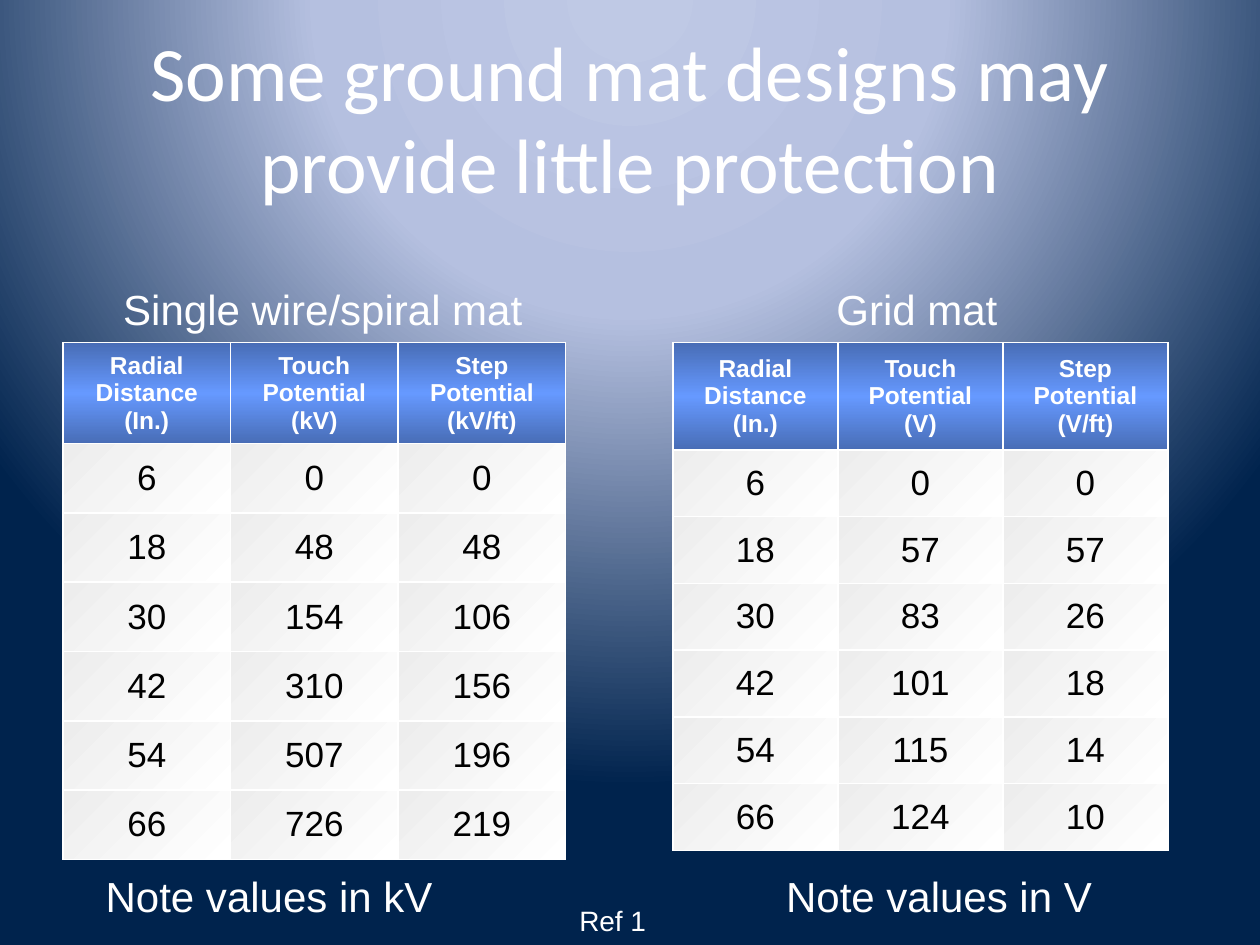
from pptx import Presentation, util as u
from pptx.dml.color import RGBColor
from pptx.enum import text
from pptx.oxml import parse_xml
from pptx.oxml.ns import nsdecls

# Content
TITLE = "Some ground mat designs may provide little protection"
TABLES = [  # left, top, column width, header height, row height, rows
    (0.5, 2.72, 1.33, 0.75, 0.55, [
        ("Radial Distance (In.)", "Touch Potential (kV)", "Step Potential (kV/ft)"),
        (6, 0, 0), (18, 48, 48), (30, 154, 106),
        (42, 310, 156), (54, 507, 196), (66, 726, 219)]),
    (5.34, 2.72, 1.31, 0.85, 0.53, [
        ("Radial Distance (In.)", "Touch Potential (V)", "Step Potential (V/ft)"),
        (6, 0, 0), (18, 57, 57), (30, 83, 26),
        (42, 101, 18), (54, 115, 14), (66, 124, 10)]),
]
LABELS = [  # text, left, top, width, height, size key
    ("Single wire/spiral mat", 0.88, 2.2, 3.4, 0.5, "label"),
    ("Grid mat", 6.54, 2.2, 1.49, 0.5, "label"),
    ("Note values in kV", 0.74, 6.86, 2.82, 0.5, "label"),
    ("Note values in V", 6.14, 6.86, 2.65, 0.5, "label"),
    ("Ref 1", 4.5, 7.12, 0.74, 0.37, "ref"),
]

# Gradient stops are (position %, colour, shade %)
THEME = {
    "light": "FFFFFF", "dark": "000000", "border": "FFFFFF",
    "head_font": "Calibri", "body_font": "Arial",
    "title": 44, "label": 24, "ref": 16, "head": 14, "cell": 20,
    "back": [(0, "BFC9E5", 100), (40, "B5C0E0", 100), (100, "00234D", 100)],
    "head_fill": [(0, "6699FF", 46.28), (50, "6699FF", 100), (100, "6699FF", 46.28)],
    "cell_fill": [(0, "FFFFFF", 84.71), (100, "FFFFFF", 100)],
}


def gradient(stops, direction):
    gs = "".join(
        f'<a:gs pos="{pos * 1000}"><a:srgbClr val="{color}">'
        + (f'<a:shade val="{round(shade * 1000)}"/>' if shade < 100 else "")
        + "</a:srgbClr></a:gs>" for pos, color, shade in stops)
    return f'<a:gradFill {nsdecls("a")} rotWithShape="1"><a:gsLst>{gs}</a:gsLst>{direction}</a:gradFill>'


def linear(stops, angle):
    return parse_xml(gradient(stops, f'<a:lin ang="{angle * 60000}" scaled="1"/>'))


def add_run(p, words, size, color, font=THEME["body_font"], bold=False):
    r = p.add_run()
    r.text = words
    r.font.name, r.font.size, r.font.bold = font, u.Pt(size), bold
    r.font.color.rgb = RGBColor.from_string(color)


def add_borders(tcPr, sides):
    for side in sides:
        tcPr.append(parse_xml(
            f'<a:ln{side} {nsdecls("a")} w="12700"><a:solidFill>'
            f'<a:srgbClr val="{THEME["border"]}"/></a:solidFill></a:ln{side}>'))


def add_data_table(s, left, top, col_w, head_h, row_h, rows):
    n_rows, n_cols = len(rows), len(rows[0])
    box = [u.Inches(v) for v in (left, top, col_w * n_cols, head_h + row_h * (n_rows - 1))]
    table = s.shapes.add_table(n_rows, n_cols, *box).table
    table.first_row = table.horz_banding = False
    for col in table.columns:
        col.width = u.Inches(col_w)
    for i, values in enumerate(rows):
        head = i == 0
        table.rows[i].height = u.Inches(head_h if head else row_h)
        for j, value in enumerate(values):
            cell = table.cell(i, j)
            cell.vertical_anchor = text.MSO_ANCHOR.MIDDLE
            p = cell.text_frame.paragraphs[0]
            p.alignment = text.PP_ALIGN.CENTER
            add_run(p, str(value), THEME["head" if head else "cell"],
                    THEME["light" if head else "dark"], bold=head)
            tcPr = cell._tc.get_or_add_tcPr()
            # The header's outer left edge stays open
            add_borders(tcPr, "RTB" if head and j == 0 else "LRTB")
            tcPr.append(linear(THEME["head_fill"], 90) if head
                        else linear(THEME["cell_fill"], 45))


def add_text(s, words, left, top, width, height, size, **style):
    sp = s.shapes.add_textbox(*[u.Inches(v) for v in (left, top, width, height)])
    tf = sp.text_frame
    add_run(tf.paragraphs[0], words, size, THEME["light"], **style)
    return tf


def main():
    prs = Presentation()
    prs.slide_width, prs.slide_height = u.Inches(10), u.Inches(7.5)
    s = prs.slides.add_slide(prs.slide_layouts[6])

    # Background glow centred above the slide
    s.background.fill.solid()
    bgPr = s._element.cSld.bg.bgPr
    glow = '<a:path path="circle"><a:fillToRect l="50000" t="-80000" r="50000" b="180000"/></a:path>'
    bgPr.replace(bgPr[0], parse_xml(gradient(THEME["back"], glow)))

    # Title
    tf = add_text(s, TITLE, 0.5, 0.3, 9, 1.25, THEME["title"], font=THEME["head_font"])
    tf.word_wrap = True
    tf.vertical_anchor = text.MSO_ANCHOR.MIDDLE
    tf.paragraphs[0].alignment = text.PP_ALIGN.CENTER

    # Tables
    for spec in TABLES:
        add_data_table(s, *spec)

    # Captions and notes
    for *place, size in LABELS:
        tf = add_text(s, *place, THEME[size])
        tf.word_wrap = False
        tf.auto_size = text.MSO_AUTO_SIZE.SHAPE_TO_FIT_TEXT

    prs.save("out.pptx")


if __name__ == "__main__":
    main()
